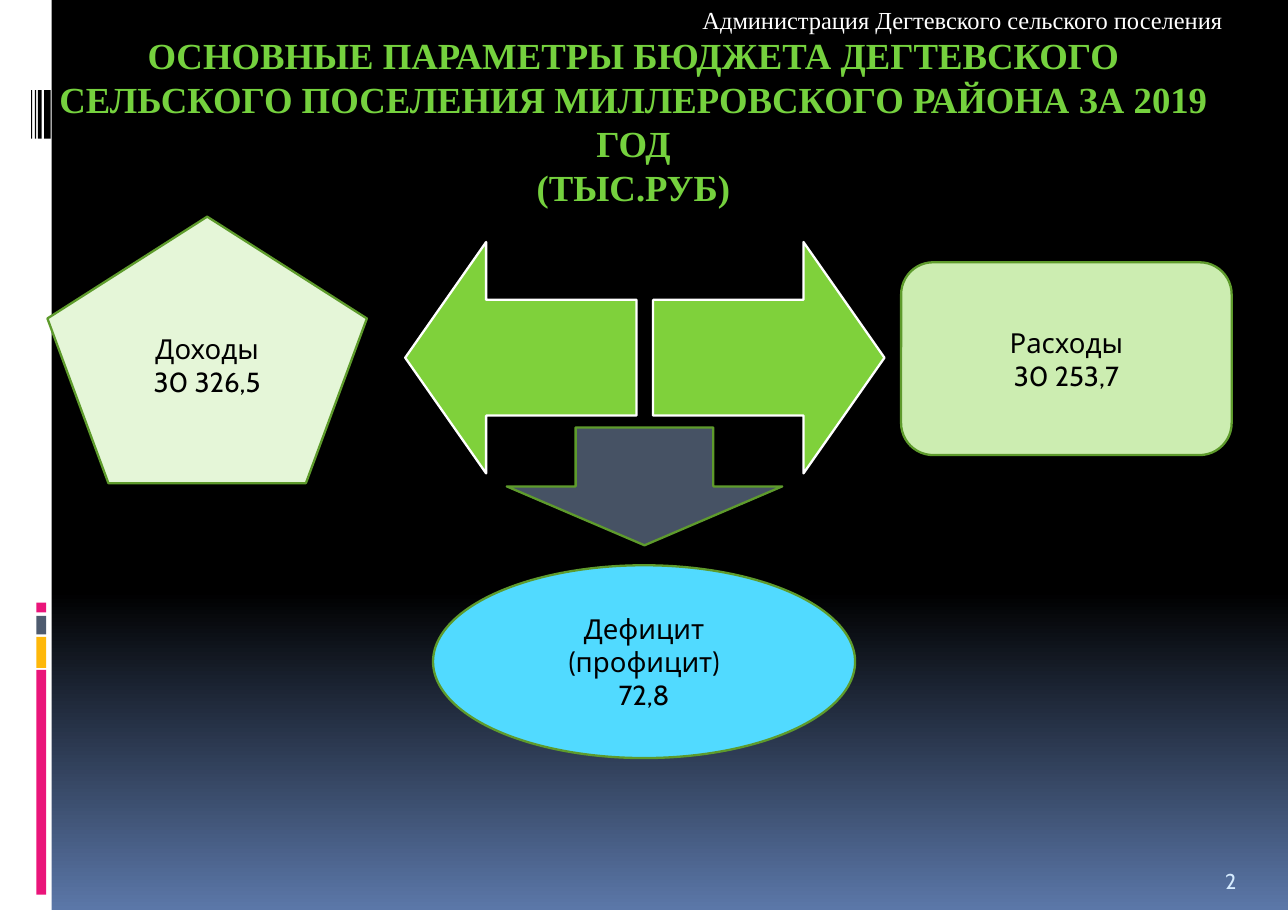
from copy import deepcopy
from dataclasses import dataclass

from pptx import Presentation
from pptx.dml.color import RGBColor
from pptx.enum.shapes import MSO_SHAPE
from pptx.enum.text import MSO_ANCHOR, PP_ALIGN
from pptx.oxml.ns import qn
from pptx.util import Pt

RECT = MSO_SHAPE.RECTANGLE
LEFT, CENTER = PP_ALIGN.LEFT, PP_ALIGN.CENTER
TOP, MIDDLE, BOTTOM = MSO_ANCHOR.TOP, MSO_ANCHOR.MIDDLE, MSO_ANCHOR.BOTTOM


@dataclass(frozen=True)
class Theme:
    serif: str = "Times New Roman"
    sans: str = "Cabin"
    title_size: int = 24
    label_size: int = 18
    header_size: int = 16
    number_size: int = 14
    black: str = "000000"
    white: str = "FFFFFF"
    sky: str = "5B77A8"
    pink: str = "EA157A"
    amber: str = "FEB80A"
    slate: str = "4E5B6F"
    title: str = "75D13E"
    arrow: str = "7FD13B"
    outline: str = "5E9B2C"
    income: str = "E5F6D8"
    expense: str = "CCEDB1"
    balance: str = "51DAFF"
    balance_arrow: str = "465264"
    number: str = "D6ECFF"


theme = Theme()

deck = Presentation()
deck.slide_width, deck.slide_height = Pt(841.68), Pt(594.72)
slide = deck.slides.add_slide(deck.slide_layouts[6])


def add_figure(kind, box, fill, line=None):
    figure = slide.shapes.add_shape(kind, *map(Pt, box))
    figure.shadow.inherit = False
    figure.fill.solid()
    figure.fill.fore_color.rgb = RGBColor.from_string(fill)
    if line:
        figure.line.color.rgb = RGBColor.from_string(line)
        figure.line.width = Pt(1.5)
    else:
        figure.line.fill.background()
    return figure


def write(shape, lines, font, size, color, align=LEFT, anchor=TOP,
          insets=(7.2, 3.6, 7.2, 3.6), bold=False):
    """Fill the shape with one paragraph per line; insets run left, top, right, bottom."""
    frame = shape.text_frame
    frame.word_wrap = True
    frame.vertical_anchor = anchor
    (frame.margin_left, frame.margin_top,
     frame.margin_right, frame.margin_bottom) = map(Pt, insets)
    frame.text = "\n".join(lines)
    for paragraph in frame.paragraphs:
        paragraph.alignment = align
        paragraph.font.name = font
        paragraph.font.size = Pt(size)
        paragraph.font.bold = bold
        paragraph.font.color.rgb = RGBColor.from_string(color)
    return frame


# Background: black down to 65 %, then fading to blue
backdrop = slide.background.fill
backdrop.gradient()
backdrop.gradient_angle = 270
black_stop, sky_stop = backdrop.gradient_stops
black_stop.color.rgb = RGBColor.from_string(theme.black)
black_stop.position = 0.65
sky_stop.color.rgb = RGBColor.from_string(theme.sky)
sky_stop.position = 1
stop_list = next(slide.element.iter(qn("a:gsLst")))
first_stop = deepcopy(stop_list[0])
first_stop.set("pos", "0")
stop_list.insert(0, first_stop)

# Side strip with its coloured blocks and black stripes
add_figure(RECT, (0, 0, 33.84, 594.72), theme.white)
for top, height, color in [
    (437.8, 146.9, theme.pink),
    (416.2, 20.2, theme.amber),
    (402.5, 12.2, theme.slate),
    (393.8, 6.5, theme.pink),
]:
    add_figure(RECT, (23.76, top, 6.48, height), color)
for left, width in [(28.8, 4.3), (24.8, 2.5), (22.8, 0.8), (20.3, 0.8)]:
    add_figure(RECT, (left, 59, width, 31.7), theme.black)

# Title
title = slide.shapes.add_textbox(Pt(25.2), Pt(21.6), Pt(777.6), Pt(116.64))
title_frame = write(
    title,
    ["ОСНОВНЫЕ ПАРАМЕТРЫ БЮДЖЕТА ДЕГТЕВСКОГО СЕЛЬСКОГО ПОСЕЛЕНИЯ "
     "МИЛЛЕРОВСКОГО РАЙОНА ЗА 2019 ГОД", "(ТЫС.РУБ)"],
    theme.serif, theme.title_size, theme.title, CENTER, insets=(0, 0, 0, 0), bold=True)
for paragraph in title_frame.paragraphs:
    paragraph.line_spacing = Pt(28.75)

# Arrows to income and expenses
for kind, left in [(MSO_SHAPE.LEFT_ARROW, 264.8), (MSO_SHAPE.RIGHT_ARROW, 426.8)]:
    arrow = add_figure(kind, (left, 158.2, 151.2, 151.2), theme.arrow, theme.white)
    arrow.adjustments[0], arrow.adjustments[1] = 0.5, 0.35

# Budget figures; the larger bottom inset lifts the income label
add_figure(MSO_SHAPE.DOWN_ARROW, (331.2, 279.4, 180, 77), theme.balance_arrow, theme.outline)
for kind, box, fill, lines, bottom_inset in [
    (MSO_SHAPE.ROUNDED_RECTANGLE, (588.9, 171.4, 216, 126), theme.expense,
     ["Расходы", "30 253,7"], 3.6),
    (MSO_SHAPE.REGULAR_PENTAGON, (31, 141.6, 208.8, 174.2), theme.income,
     ["Доходы", "30 326,5"], 25.2),
    (MSO_SHAPE.OVAL, (283, 369.4, 275.8, 126), theme.balance,
     ["Дефицит", "(профицит)", "72,8"], 3.6),
]:
    figure = add_figure(kind, box, fill, theme.outline)
    write(figure, lines, theme.sans, theme.label_size, theme.black, CENTER, MIDDLE,
          (7.2, 3.6, 7.2, bottom_inset))

# Page number and header
page_number = slide.shapes.add_textbox(Pt(792.7), Pt(556.6), Pt(41.8), Pt(31.7))
write(page_number, ["2"], theme.sans, theme.number_size, theme.number,
      anchor=BOTTOM, insets=(7.9, 4.3, 7.9, 4.3))
header = slide.shapes.add_textbox(Pt(452), Pt(0), Pt(389.6), Pt(26.6))
write(header, ["Администрация Дегтевского сельского поселения"],
      theme.serif, theme.header_size, theme.white)

deck.save("out.pptx")
